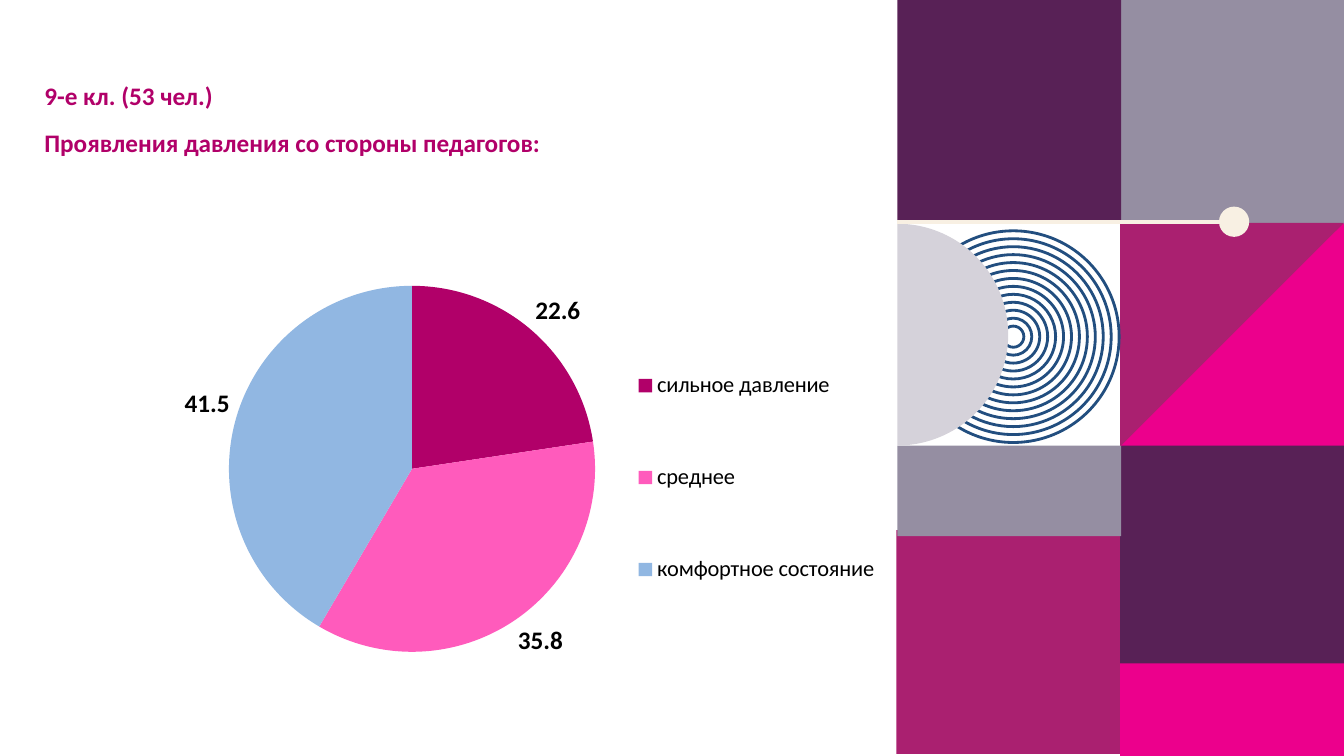
from math import cos, pi, sin

from lxml import etree
from pptx import Presentation
from pptx.chart.data import CategoryChartData
from pptx.dml.color import RGBColor
from pptx.enum.chart import XL_CHART_TYPE, XL_LABEL_POSITION, XL_LEGEND_POSITION
from pptx.enum.shapes import MSO_CONNECTOR, MSO_SHAPE
from pptx.enum.text import MSO_ANCHOR, MSO_AUTO_SIZE, PP_ALIGN
from pptx.oxml.ns import qn
from pptx.util import Inches, Pt

RECT, OVAL = MSO_SHAPE.RECTANGLE, MSO_SHAPE.OVAL
COLORS = {name: RGBColor.from_string(code) for name, code in {
    "plum": "582156", "grey": "958EA2", "pale": "D5D2DA", "berry": "AA2070",
    "pink": "EC008C", "navy": "224E7F", "cream": "F8F0E3", "heading": "B10069",
    "strong": "B10069", "medium": "FF5BBC", "comfort": "91B7E2", "black": "000000",
}.items()}
FONT = "Calibri"
TILE = 2.22
COL1, COL2 = 8.9, 11.11
ROW2, ROW3 = 2.21, 4.42

prs = Presentation()
prs.slide_width, prs.slide_height = Inches(13.33), Inches(7.5)
slide = prs.slides.add_slide(prs.slide_layouts[5])
shapes = slide.shapes


def paint(shape, fill=None, line=None):
    shape.shadow.inherit = False
    if fill:
        shape.fill.solid()
        shape.fill.fore_color.rgb = COLORS[fill]
    else:
        shape.fill.background()
    if line:
        shape.line.color.rgb = COLORS[line]
        shape.line.width = Pt(2)
    else:
        shape.line.fill.background()


def place(parent, x, y, w, h):
    layout = parent.find(qn("c:layout"))
    if layout is None:
        layout = etree.Element(qn("c:layout"))
        before = parent.find(qn("c:legendPos"))
        if before is None:
            parent.insert(0, layout)
        else:
            before.addnext(layout)
    manual = etree.SubElement(layout, qn("c:manualLayout"))
    if parent.tag == qn("c:plotArea"):
        etree.SubElement(manual, qn("c:layoutTarget")).set("val", "inner")
    for tag, value in (("xMode", "edge"), ("yMode", "edge"),
                       ("x", x), ("y", y), ("w", w), ("h", h)):
        etree.SubElement(manual, qn("c:" + tag)).set("val", str(value))


for color, left, top, height in (
    ("pink", COL2, ROW2, TILE),
    ("grey", COL2, 0, TILE),
    ("plum", COL1, -0.01, TILE),
    ("berry", COL1 - 0.01, 5.26, TILE),
    ("plum", COL2, ROW3, TILE),
    ("pink", COL2, 6.58, 0.92),
):
    tile = shapes.add_shape(RECT, Inches(left), Inches(top), Inches(TILE), Inches(height))
    paint(tile, color)

corner = shapes.build_freeform(Inches(COL2 + TILE), Inches(ROW2))
corner.add_line_segments([(Inches(COL2), Inches(ROW2 + TILE)), (Inches(COL2), Inches(ROW2))])
paint(corner.convert_to_shape(), "berry")

RINGS, RING_X, RING_Y = 13, 10.05, 3.34
for step in range(RINGS):
    size = 2.1 - step * (2.1 - 0.21) / (RINGS - 1)
    ring = shapes.add_shape(OVAL, Inches(RING_X - size / 2), Inches(RING_Y - size / 2),
                            Inches(size), Inches(size))
    paint(ring, line="navy")

band = shapes.add_shape(RECT, Inches(COL1), Inches(ROW3), Inches(TILE), Inches(0.9))
paint(band, "grey")

ARC_STEPS, ARC_Y, ARC_R = 90, 3.32, 1.1
arc = [(Inches(COL1 + ARC_R * sin(pi * i / ARC_STEPS)),
        Inches(ARC_Y - ARC_R * cos(pi * i / ARC_STEPS))) for i in range(ARC_STEPS + 1)]
half_disc = shapes.build_freeform(*arc[0])
half_disc.add_line_segments(arc[1:])
paint(half_disc.convert_to_shape(), "pale")

rod = shapes.add_connector(MSO_CONNECTOR.STRAIGHT, Inches(COL1), Inches(2.2),
                           Inches(12.23), Inches(2.2))
rod.line.color.rgb = COLORS["cream"]
rod.line.width = Pt(3)
etree.SubElement(rod._element.spPr, qn("a:effectLst"))
knob = shapes.add_shape(OVAL, Inches(12.09), Inches(2.05), Inches(0.3), Inches(0.3))
paint(knob, "cream")

heading = shapes.title
for side, value in {"left": 0.34, "top": 0.71, "width": 8.1, "height": 1.2}.items():
    setattr(heading, side, Inches(value))
frame = heading.text_frame
for name, value in {"word_wrap": True, "vertical_anchor": MSO_ANCHOR.TOP,
                    "auto_size": MSO_AUTO_SIZE.NONE}.items():
    setattr(frame, name, value)
frame.text = "9-е кл. (53 чел.)\nПроявления давления со стороны педагогов:"
for index, paragraph in enumerate(frame.paragraphs):
    paragraph.alignment = PP_ALIGN.LEFT
    paragraph.line_spacing = Pt(24)
    paragraph.space_before = Pt(10 * index)
    for name, value in {"name": FONT, "size": Pt(18), "bold": True}.items():
        setattr(paragraph.font, name, value)
    paragraph.font.color.rgb = COLORS["heading"]

pressure = CategoryChartData()
pressure.categories = ["сильное давление", "среднее", "комфортное состояние"]
pressure.add_series("Series 1", (22.6, 35.8, 41.5))
chart = shapes.add_chart(XL_CHART_TYPE.PIE, Inches(1.63), Inches(2.53),
                         Inches(7.12), Inches(4.33), pressure).chart
chart.has_title = False
chart.has_legend = True
chart.legend.position = XL_LEGEND_POSITION.RIGHT
chart.legend.include_in_layout = False

plot = chart.plots[0]
plot.vary_by_categories = True
plot.has_data_labels = True
labels = plot.data_labels
for name, value in {"show_value": True, "show_percentage": False,
                    "position": XL_LABEL_POSITION.OUTSIDE_END}.items():
    setattr(labels, name, value)

for font, size, bold in ((chart.font, 18, False), (chart.legend.font, 16, False),
                         (labels.font, 18, True)):
    for name, value in {"name": FONT, "size": Pt(size), "bold": bold}.items():
        setattr(font, name, value)
    font.color.rgb = COLORS["black"]

for index, level in enumerate(("strong", "medium", "comfort")):
    fill = plot.series[0].points[index].format.fill
    fill.solid()
    fill.fore_color.rgb = COLORS[level]

chart_xml = chart._chartSpace.chart
place(chart_xml.plotArea, 0.09, 0.07, 0.51, 0.84)
place(chart_xml.find(qn("c:legend")), 0.65, 0.12, 0.35, 0.78)

prs.save("out.pptx")
